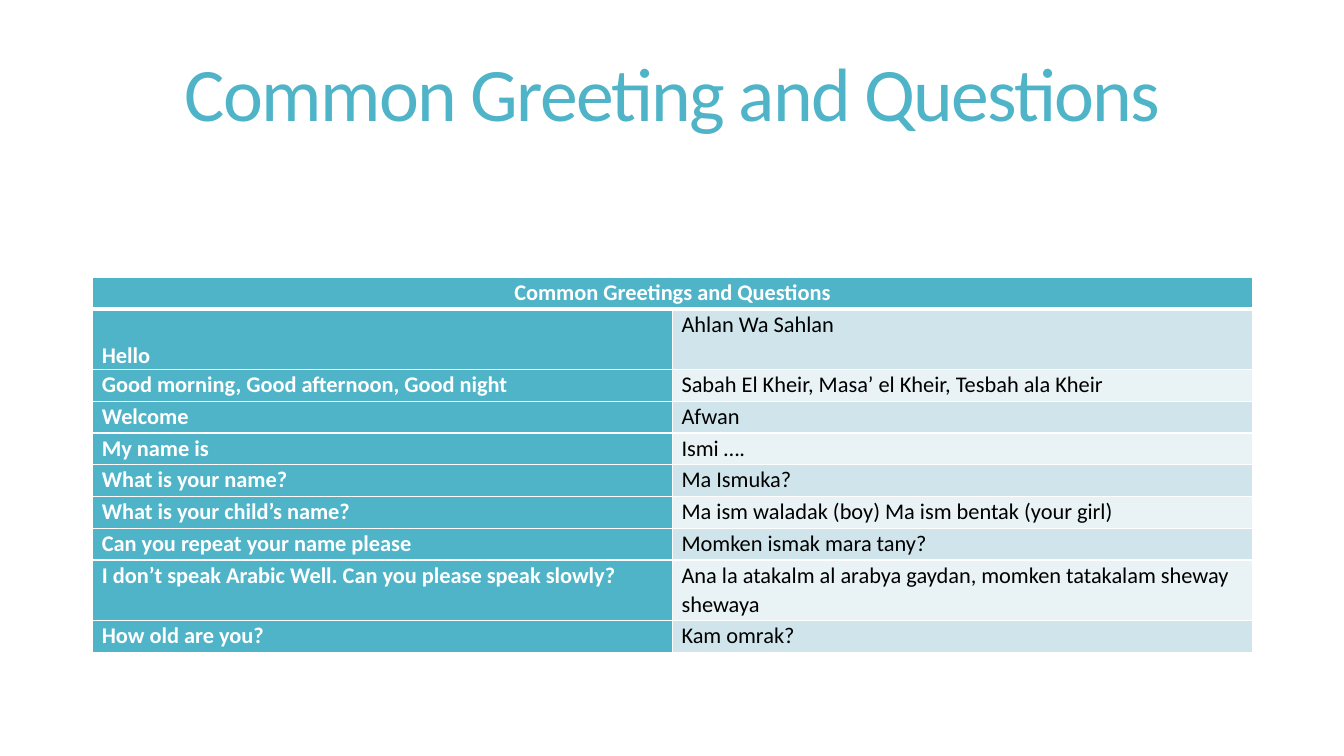
from lxml import etree
from pptx import Presentation
from pptx.dml.color import RGBColor
from pptx.enum.text import MSO_ANCHOR, PP_ALIGN
from pptx.oxml.ns import qn
from pptx.util import Inches, Pt

CENTER, LEFT = PP_ALIGN.CENTER, PP_ALIGN.LEFT
TOP, MIDDLE, BOTTOM = MSO_ANCHOR.TOP, MSO_ANCHOR.MIDDLE, MSO_ANCHOR.BOTTOM
COLORS = {"teal": "50B4C8", "dark": "D0E5EB", "light": "E9F2F5",
          "white": "FFFFFF", "black": "000000"}
HEADING = "Common Greetings and Questions"
PHRASES = [
    ("Hello", "Ahlan Wa Sahlan"),
    ("Good morning, Good afternoon, Good night",
     "Sabah El Kheir, Masa’ el Kheir, Tesbah ala Kheir"),
    ("Welcome", "Afwan"),
    ("My name is", "Ismi …."),
    ("What is your name?", "Ma Ismuka?"),
    ("What is your child’s name?",
     "Ma ism waladak (boy) Ma ism bentak (your girl)"),
    ("Can you repeat your name please", "Momken ismak mara tany?"),
    ("I don’t speak Arabic Well. Can you please speak slowly?",
     "Ana la atakalm al arabya gaydan, momken tatakalam sheway shewaya"),
    ("How old are you?", "Kam omrak?"),
]
TALL_ROWS = (1, 8)


def color(name):
    return RGBColor.from_string(COLORS[name])


def write(frame, text, font="Calibri", size=16, ink="black", bold=False,
          align=LEFT, lines=1.07, track=0):
    """Put one formatted paragraph in a text frame; track is in points."""
    para = frame.paragraphs[0]
    para.alignment, para.line_spacing = align, lines
    run = para.add_run()
    run.text = text
    run.font.name, run.font.size, run.font.bold = font, Pt(size), bold
    run.font.color.rgb = color(ink)
    if track:
        run.font._element.set("spc", str(round(track * 100)))


def border(cell, **widths):
    """Draw white cell edges; L, R, T and B give widths in points."""
    props = cell._tc.get_or_add_tcPr()
    for side in "LRTB":
        line = etree.SubElement(props, qn(f"a:ln{side}"),
                                w=str(Pt(widths.get(side, 1))))
        fill = etree.SubElement(line, qn("a:solidFill"))
        etree.SubElement(fill, qn("a:srgbClr"), val=COLORS["white"])


class Deck:
    def __init__(self, font="Calibri"):
        self.font = font
        self.show = Presentation()
        self.show.slide_width = Inches(13.33)
        self.show.slide_height = Inches(7.5)
        self.slide = self.show.slides.add_slide(self.show.slide_layouts[6])

    def title(self, text, left, top, width, height):
        box = self.slide.shapes.add_textbox(
            Inches(left), Inches(top), Inches(width), Inches(height))
        frame = box.text_frame
        frame.word_wrap, frame.vertical_anchor = True, MIDDLE
        write(frame, text, font=self.font, size=54, ink="teal",
              align=CENTER, lines=0.85, track=-1.2)

    def cell(self, cell, text, fill, anchor=TOP, edges=None, **style):
        cell.margin_left = cell.margin_right = Inches(0.09)
        cell.margin_top = cell.margin_bottom = 0
        cell.vertical_anchor = anchor
        border(cell, **(edges or {}))
        cell.fill.solid()
        cell.fill.fore_color.rgb = color(fill)
        write(cell.text_frame, text, font=self.font, **style)

    def table(self, heading, pairs, left, top, width, height, tall=0.6):
        count = len(pairs) + 1
        grid = self.slide.shapes.add_table(
            count, 2, Inches(left), Inches(top),
            Inches(width), Inches(height)).table
        short = (height - tall * len(TALL_ROWS)) / (count - len(TALL_ROWS))
        for idx, row in enumerate(grid.rows):
            row.height = Inches(tall if idx in TALL_ROWS else short)
        label = {"fill": "teal", "ink": "white", "bold": True}
        grid.cell(0, 0).merge(grid.cell(0, 1))
        self.cell(grid.cell(0, 0), heading, align=CENTER,
                  edges={"B": 3}, **label)
        border(grid.cell(0, 1), B=3)
        for idx, (english, arabic) in enumerate(pairs, 1):
            edges = {"T": 3 if idx == 1 else 1}
            self.cell(grid.cell(idx, 0), english, edges=edges,
                      anchor=BOTTOM if idx == 1 else TOP, **label)
            self.cell(grid.cell(idx, 1), arabic, edges=edges,
                      fill="dark" if idx % 2 else "light")


def main():
    deck = Deck()
    deck.title("Common Greeting and Questions", 0.92, 0.28, 11.5, 1.39)
    deck.table(HEADING, PHRASES, 0.92, 2.75, 11.5, 3.72)
    deck.show.save("out.pptx")


if __name__ == "__main__":
    main()
